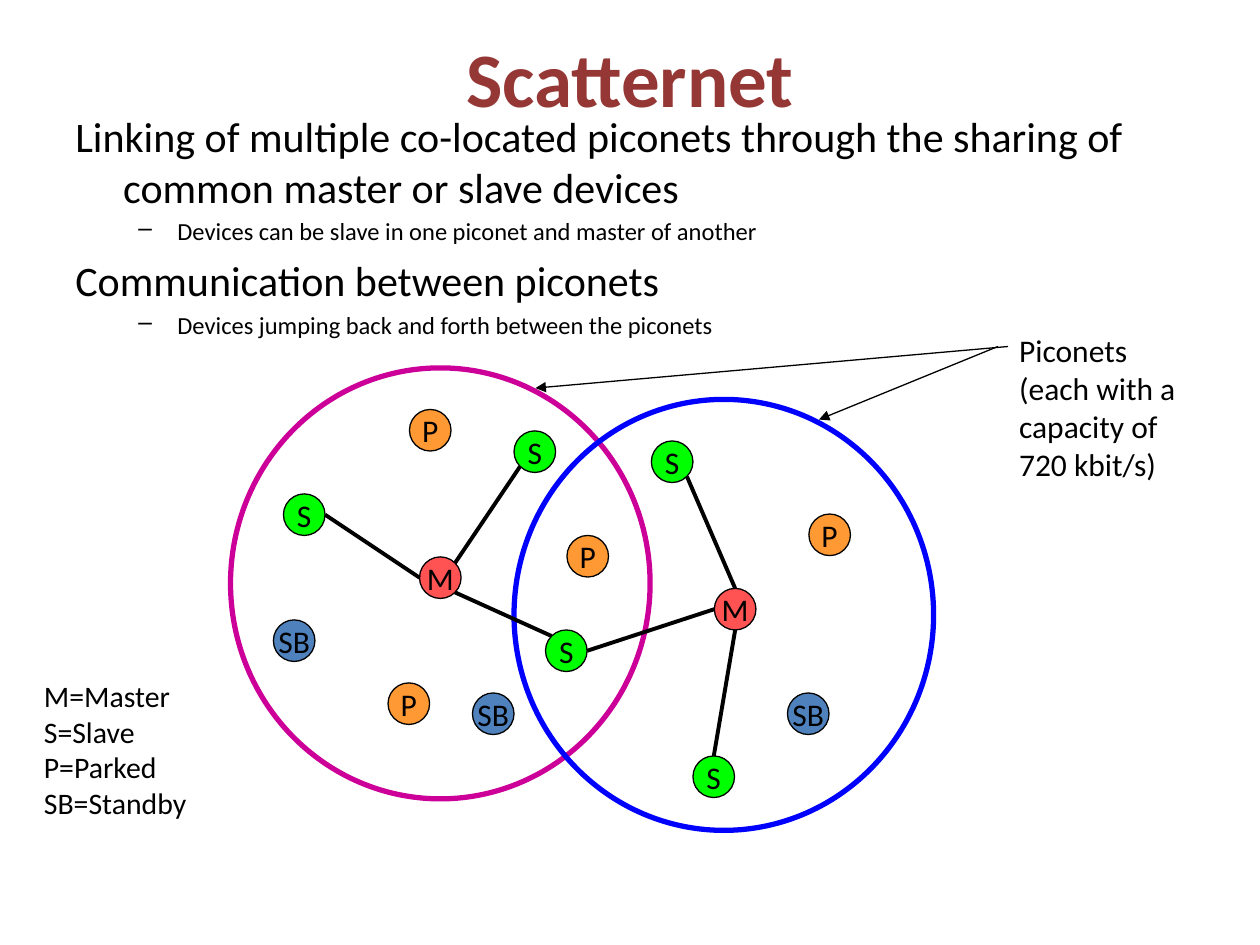
from math import cos, radians, sin

from lxml.etree import SubElement
from pptx import Presentation
from pptx.dml.color import RGBColor
from pptx.enum.shapes import MSO_CONNECTOR, MSO_SHAPE
from pptx.enum.text import MSO_ANCHOR, MSO_AUTO_SIZE, PP_ALIGN
from pptx.oxml.ns import qn
from pptx.util import Inches, Pt

FONT = "Calibri"
BLACK = RGBColor(0x00, 0x00, 0x00)
MAROON = RGBColor(0x95, 0x37, 0x35)
MAGENTA = RGBColor(0xCC, 0x00, 0x99)
BLUE = RGBColor(0x00, 0x00, 0xFF)
DEVICE_FILLS = {
    "M": RGBColor(0xFF, 0x53, 0x53),
    "S": RGBColor(0x00, 0xFF, 0x00),
    "P": RGBColor(0xFF, 0x99, 0x33),
    "SB": RGBColor(0x4F, 0x81, 0xBD),
}

# Content
TITLE = "Scatternet"
POINTS = [
    (0, "Linking of multiple co-located piconets through the sharing of "
        "common master or slave devices"),
    (1, "Devices can be slave in one piconet and master of another"),
    (0, "Communication between piconets"),
    (1, "Devices jumping back and forth between the piconets"),
]
# Level: size, left margin, first-line indent, bullet
POINT_STYLES = [(24, 0.38, -0.38, None), (14, 0.81, -0.31, "–")]
LEGEND = ["M=Master", "S=Slave", "P=Parked", "SB=Standby"]
NOTE = ["Piconets", "(each with a", "capacity of", "720 kbit/s)"]

# Piconets: left, top, colour
PICONET_WIDTH, PICONET_HEIGHT = 3.33, 3.42
PICONETS = [(1.83, 2.92, MAGENTA), (4.08, 3.17, BLUE)]

# Devices: name, role, left, top
DEVICE_SIZE = 0.33
DEVICES = [
    ("left master", "M", 3.33, 4.42),
    ("west slave", "S", 2.25, 3.92),
    ("north slave", "S", 4.08, 3.42),
    ("shared slave", "S", 4.33, 5),
    ("right master", "M", 5.67, 4.67),
    ("upper slave", "S", 5.17, 3.5),
    ("lower slave", "S", 5.5, 6),
    ("parked", "P", 3.08, 5.42),
    ("parked", "P", 3.25, 3.25),
    ("parked", "P", 4.5, 4.25),
    ("parked", "P", 6.42, 4.08),
    ("standby", "SB", 2.17, 4.92),
    ("standby", "SB", 3.75, 5.5),
    ("standby", "SB", 6.25, 5.5),
]
# Links: device and angle of its edge point, clockwise from the right, for both ends
LINKS = [
    ("left master", 180, "west slave", 0),
    ("left master", -45, "north slave", 135),
    ("shared slave", -135, "left master", 45),
    ("right master", -90, "upper slave", 45),
    ("right master", 180, "shared slave", 0),
    ("right master", 90, "lower slave", -90),
]
ARROWS = [((8, 2.75), (4.25, 3.08)), ((7.92, 2.75), (6.5, 3.33))]


def add_span(para, text, size, color=BLACK, bold=False):
    span = para.add_run()
    span.text = text
    span.font.name = FONT
    span.font.size = Pt(size)
    span.font.bold = bold
    span.font.color.rgb = color


def next_para(frame, index):
    return frame.paragraphs[0] if index == 0 else frame.add_paragraph()


def add_circle(page, left, top, width, height, color, weight):
    circle = page.shapes.add_shape(
        MSO_SHAPE.OVAL, Inches(left), Inches(top), Inches(width), Inches(height))
    circle.shadow.inherit = False
    circle.fill.background()
    circle.line.color.rgb = color
    circle.line.width = Pt(weight)
    return circle


def add_device(page, role, left, top):
    device = add_circle(page, left, top, DEVICE_SIZE, DEVICE_SIZE, BLACK, 0.75)
    device.fill.solid()
    device.fill.fore_color.rgb = DEVICE_FILLS[role]
    frame = device.text_frame
    frame.word_wrap = False
    frame.vertical_anchor = MSO_ANCHOR.MIDDLE
    frame.paragraphs[0].alignment = PP_ALIGN.CENTER
    add_span(frame.paragraphs[0], role, 18)


def add_line(page, start, end, weight, arrow=False):
    line = page.shapes.add_connector(
        MSO_CONNECTOR.STRAIGHT, *(Inches(value) for value in (*start, *end)))
    line.line.color.rgb = BLACK
    line.line.width = Pt(weight)
    if arrow:
        SubElement(line.line._get_or_add_ln(), qn("a:tailEnd"), type="triangle")
    SubElement(line._element.spPr, qn("a:effectLst"))


def edge_point(name, angle):
    left, top = next(device[2:] for device in DEVICES if device[0] == name)
    radius = DEVICE_SIZE / 2
    return (left + radius + radius * cos(radians(angle)),
            top + radius + radius * sin(radians(angle)))


def add_caption(page, lines, left, top, width, height, size):
    box = page.shapes.add_textbox(
        Inches(left), Inches(top), Inches(width), Inches(height))
    frame = box.text_frame
    frame.word_wrap = False
    frame.auto_size = MSO_AUTO_SIZE.SHAPE_TO_FIT_TEXT
    for index, text in enumerate(lines):
        add_span(next_para(frame, index), text, size)


def add_points(page):
    box = page.shapes.add_textbox(Inches(0.5), Inches(0.83), Inches(9), Inches(5.87))
    frame = box.text_frame
    frame.word_wrap = True
    for index, (level, text) in enumerate(POINTS):
        size, margin, indent, bullet = POINT_STYLES[level]
        para = next_para(frame, index)
        para.level = level
        para.space_before = Pt(size * 0.2)
        add_span(para, text, size)
        properties = para._p.get_or_add_pPr()
        properties.set("marL", str(Inches(margin)))
        properties.set("indent", str(Inches(indent)))
        if bullet:
            SubElement(properties, qn("a:buChar"), char=bullet)
        else:
            SubElement(properties, qn("a:buNone"))


def main():
    deck = Presentation()
    deck.slide_width, deck.slide_height = Inches(10), Inches(7.5)
    page = deck.slides.add_slide(deck.slide_layouts[5])

    # Piconet outlines
    for left, top, color in PICONETS:
        add_circle(page, left, top, PICONET_WIDTH, PICONET_HEIGHT, color, 3)

    # Title and points
    title = page.shapes.title
    title.left, title.top = Inches(0.5), Inches(0.3)
    title.width, title.height = Inches(9), Inches(0.62)
    title.text_frame.vertical_anchor = MSO_ANCHOR.MIDDLE
    title.text_frame.auto_size = MSO_AUTO_SIZE.NONE
    title.text_frame.paragraphs[0].alignment = PP_ALIGN.CENTER
    add_span(title.text_frame.paragraphs[0], TITLE, 44, MAROON, bold=True)
    add_points(page)

    # Devices and their links
    for _, role, left, top in DEVICES:
        add_device(page, role, left, top)
    for first, first_angle, second, second_angle in LINKS:
        add_line(page, edge_point(first, first_angle),
                 edge_point(second, second_angle), 2.25)

    # Legend and piconet note
    add_caption(page, LEGEND, 0.25, 5.33, 1.54, 1.24, 17)
    add_caption(page, NOTE, 7.99, 2.58, 1.46, 1.17, 18)
    for start, end in ARROWS:
        add_line(page, start, end, 0.75, arrow=True)

    deck.save("out.pptx")


if __name__ == "__main__":
    main()
